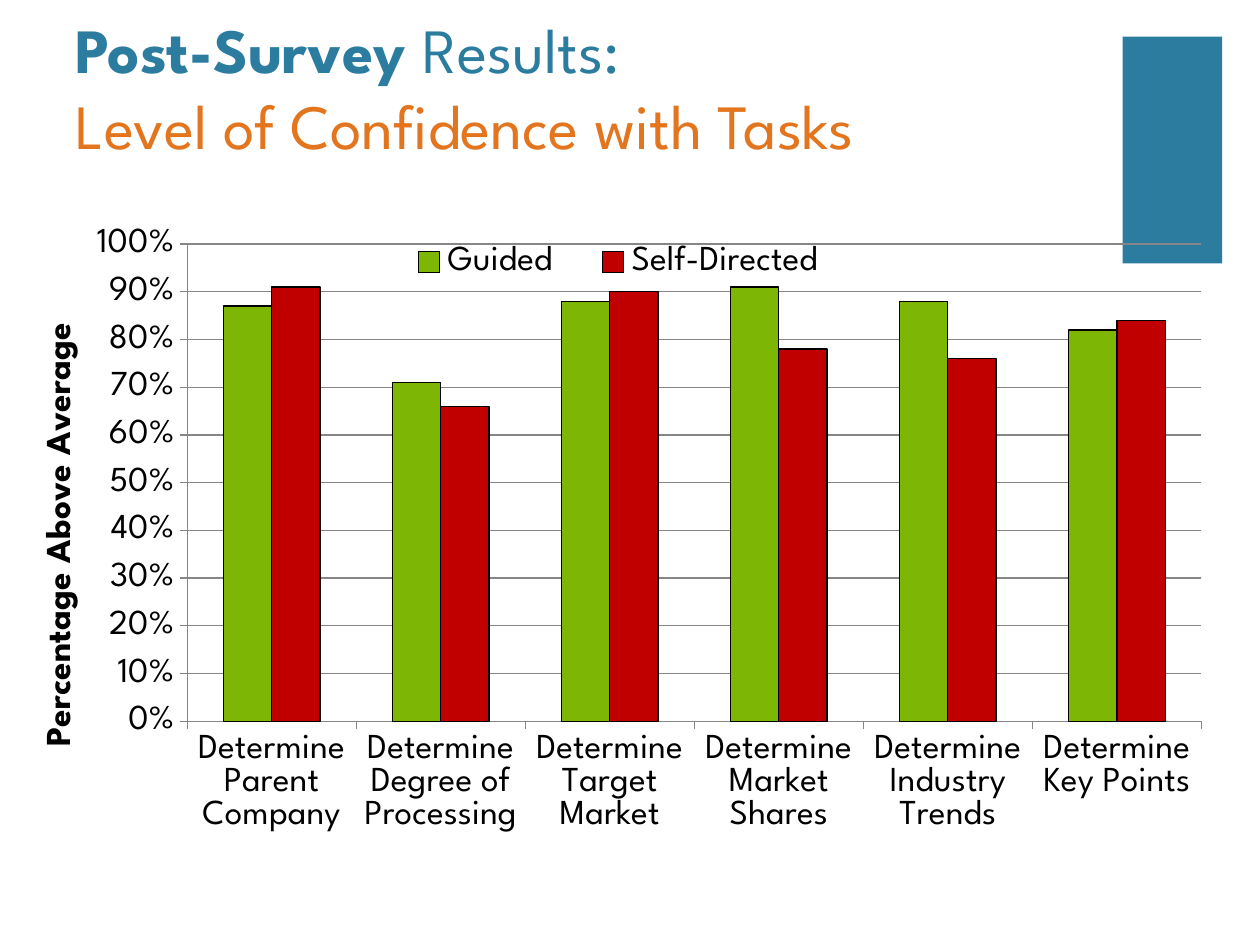
from pptx import Presentation, util as u
from pptx.chart.data import CategoryChartData
from pptx.dml.color import RGBColor
from pptx.enum import chart as c, shapes, text
from pptx.oxml import parse_xml
from pptx.oxml.ns import nsdecls, qn

COLORS = {
    "teal": "2C7C9F",
    "orange": "E2751D",
    "green": "7EB606",
    "red": "C00000",
    "grid": "868686",
    "black": "000000",
}
TASKS = ["Parent Company", "Degree of Processing", "Target Market",
         "Market Shares", "Industry Trends", "Key Points"]
SERIES = {
    "Guided": ("green", [0.87, 0.71, 0.88, 0.91, 0.88, 0.82]),
    "Self-Directed": ("red", [0.91, 0.66, 0.9, 0.78, 0.76, 0.84]),
}


def color(name):
    return RGBColor.from_string(COLORS[name])


def place(element, after=None, inner=False, **fractions):
    """Give a chart part a manual layout, in fractions of the chart frame."""
    for old in element.findall(qn("c:layout")):
        element.remove(old)
    target = '<c:layoutTarget val="inner"/>' if inner else ""
    modes = "".join(f'<c:{key}Mode val="edge"/>' for key in "xy")
    sizes = "".join(f'<c:{key} val="{value}"/>' for key, value in fractions.items())
    layout = parse_xml(f'<c:layout {nsdecls("c")}><c:manualLayout>'
                       f'{target}{modes}{sizes}</c:manualLayout></c:layout>')
    if after:
        element.find(qn(after)).addnext(layout)
    else:
        element.insert(0, layout)


class SlideBuilder:
    font_name = "League Spartan"
    title_size = u.Pt(36)
    chart_size = u.Pt(20)

    def __init__(self, slide):
        self.slide = slide

    def style(self, font, size, color_name, bold=False):
        font.name, font.size, font.bold = self.font_name, size, bold
        font.color.rgb = color(color_name)

    def block(self, left, top, width, height, color_name):
        shape = self.slide.shapes.add_shape(
            shapes.MSO_SHAPE.RECTANGLE, left, top, width, height)
        shape.shadow.inherit = False
        shape.fill.solid()
        shape.fill.fore_color.rgb = color(color_name)
        shape.line.fill.background()

    def title(self, left, top, width, height, lines):
        """Each line is a list of (words, colour, bold) runs."""
        frame = self.slide.shapes.add_textbox(left, top, width, height).text_frame
        frame.word_wrap = True
        frame.vertical_anchor = text.MSO_ANCHOR.BOTTOM
        frame.margin_bottom = u.Inches(0.34)
        for index, line in enumerate(lines):
            paragraph = frame.add_paragraph() if index else frame.paragraphs[0]
            paragraph.line_spacing = u.Pt(43.5)
            for words, color_name, bold in line:
                run = paragraph.add_run()
                run.text = words
                self.style(run.font, self.title_size, color_name, bold)

    def column_chart(self, left, top, width, height, categories, series, axis_title):
        data = CategoryChartData(number_format="0%")
        data.categories = categories
        for name, (_, values) in series.items():
            data.add_series(name, values)
        chart = self.slide.shapes.add_chart(
            c.XL_CHART_TYPE.COLUMN_CLUSTERED, left, top, width, height, data).chart
        self.style(chart.font, self.chart_size, "black")
        chart.has_title = False
        plot = chart.plots[0]
        plot.gap_width, plot.overlap, plot.vary_by_categories = 150, 0, False
        for columns, (color_name, _) in zip(plot.series, series.values()):
            columns.format.fill.solid()
            columns.format.fill.fore_color.rgb = color(color_name)
            self.line(columns.format.line, "black")
        place(chart._chartSpace.chart.plotArea, inner=True,
              x=0.138, y=0.041, w=0.851, h=0.653)
        self.axes(chart, axis_title)
        self.legend(chart)

    def line(self, line, color_name):
        line.color.rgb = color(color_name)
        line.width = u.Pt(0.75)

    def axes(self, chart, axis_title):
        values = chart.value_axis
        for axis in (chart.category_axis, values):
            axis.major_tick_mark = c.XL_TICK_MARK.OUTSIDE
            self.line(axis.format.line, "grid")
        values.minimum_scale, values.maximum_scale, values.major_unit = 0, 1, 0.1
        values.tick_labels.number_format = "0%"
        values.tick_labels.number_format_is_linked = False
        values.has_major_gridlines = True
        self.line(values.major_gridlines.format.line, "grid")
        frame = values.axis_title.text_frame
        frame.text = axis_title
        self.style(frame.paragraphs[0].runs[0].font, self.chart_size, "black", True)
        place(values.axis_title._element, after="c:tx", x=0.01, y=0.14)

    def legend(self, chart):
        chart.has_legend = True
        chart.legend.position = c.XL_LEGEND_POSITION.RIGHT
        chart.legend.include_in_layout = False
        self.style(chart.legend.font, self.chart_size, "black")
        place(chart.legend._element, after="c:legendPos", x=0.3, y=0.03, w=0.4, h=0.07)


def main():
    presentation = Presentation()
    presentation.slide_width, presentation.slide_height = u.Inches(10), u.Inches(7.5)
    builder = SlideBuilder(presentation.slides.add_slide(presentation.slide_layouts[6]))
    builder.block(u.Inches(8.91), u.Inches(0.29), u.Inches(0.79), u.Inches(1.8), "teal")
    builder.title(u.Inches(0.5), u.Inches(0.38), u.Inches(8.85), u.Inches(1.25), [
        [("Post-Survey ", "teal", True), ("Results:", "teal", False)],
        [("Level of Confidence with Tasks", "orange", False)],
    ])
    builder.column_chart(
        u.Inches(0.18), u.Inches(1.7), u.Inches(9.46), u.Inches(5.8),
        [f"Determine {task}" for task in TASKS], SERIES, "Percentage Above Average")
    presentation.save("out.pptx")


if __name__ == "__main__":
    main()
